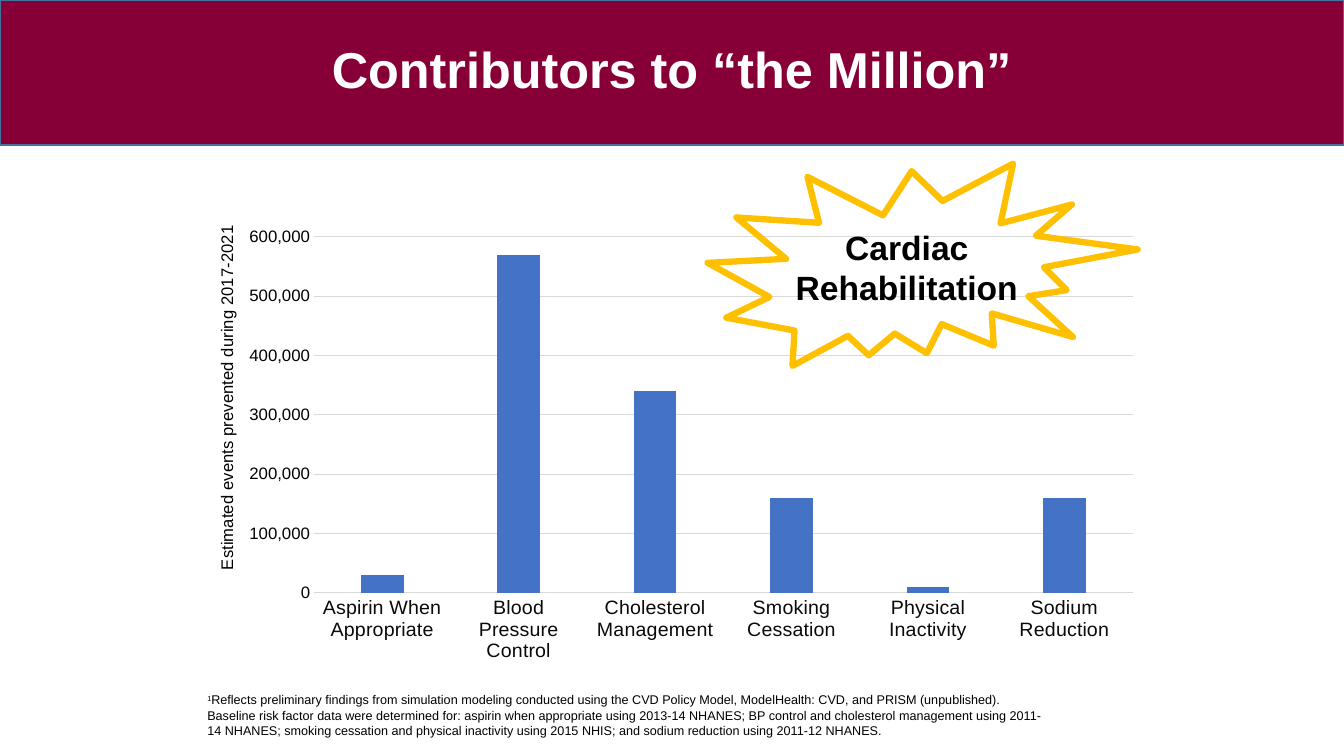
from lxml import etree
from pptx import Presentation
from pptx.chart.data import CategoryChartData
from pptx.dml.color import RGBColor
from pptx.enum.chart import XL_CHART_TYPE as ChartType, XL_TICK_MARK as Tick
from pptx.enum.shapes import MSO_SHAPE as Shape
from pptx.enum.text import MSO_ANCHOR as Anchor, PP_ALIGN as Align
from pptx.oxml.ns import qn
from pptx.util import Pt

MAROON = RGBColor(0x86, 0x00, 0x37)
EDGE_BLUE = RGBColor(0x43, 0x73, 0x9E)
BAR_BLUE = RGBColor(0x44, 0x72, 0xC4)
GOLD = RGBColor(0xFF, 0xC0, 0x00)
GRID_GREY = RGBColor(0xD9, 0xD9, 0xD9)
INK = RGBColor(0x0A, 0x0A, 0x0A)
BLACK = RGBColor(0, 0, 0)
WHITE = RGBColor(0xFF, 0xFF, 0xFF)

EVENTS_PREVENTED = {
    "Aspirin When Appropriate": 30000,
    "Blood Pressure Control": 570000,
    "Cholesterol Management": 340000,
    "Smoking Cessation": 160000,
    "Physical Inactivity": 10000,
    "Sodium Reduction": 160000,
}
FOOTNOTE = (
    "Reflects preliminary findings from simulation modeling conducted using the CVD "
    "Policy Model, ModelHealth: CVD, and PRISM (unpublished). Baseline risk factor data "
    "were determined for: aspirin when appropriate using 2013-14 NHANES; BP control and "
    "cholesterol management using 2011-14 NHANES; smoking cessation and physical "
    "inactivity using 2015 NHIS; and sodium reduction using 2011-12 NHANES."
)


def style_font(font, size, color, bold=False, name="Arial"):
    font.name, font.size, font.bold = name, Pt(size), bold
    font.color.rgb = color


def add_run(paragraph, text, size, color, bold=False):
    run = paragraph.add_run()
    run.text = text
    style_font(run.font, size, color, bold)
    return run


def add_text_area(slide, box, align=Align.LEFT, anchor=Anchor.TOP):
    frame = slide.shapes.add_textbox(*map(Pt, box)).text_frame
    frame.word_wrap = True
    frame.vertical_anchor = anchor
    paragraph = frame.paragraphs[0]
    paragraph.alignment = align
    return paragraph


def set_layout(parent, index, **settings):
    """Give a chart part a fixed place, in fractions of the chart."""
    for old in parent.findall(qn("c:layout")):
        parent.remove(old)
    layout = etree.Element(qn("c:layout"))
    manual = etree.SubElement(layout, qn("c:manualLayout"))
    for tag, value in settings.items():
        etree.SubElement(manual, qn(f"c:{tag}")).set("val", str(value))
    parent.insert(index, layout)


def add_header(slide, box):
    left, top, width, height = box
    band = slide.shapes.add_shape(Shape.RECTANGLE, *map(Pt, box))
    band.shadow.inherit = False
    band.fill.solid()
    band.fill.fore_color.rgb = MAROON
    band.line.color.rgb = EDGE_BLUE
    band.line.width = Pt(1)

    margin = 66
    title = add_text_area(slide, (left + margin, top, width - 2 * margin, height),
                          Align.CENTER, Anchor.MIDDLE)
    title.line_spacing = 0.9
    add_run(title, "Contributors to “the Million”", 36, WHITE, bold=True)


def add_events_chart(slide, box):
    data = CategoryChartData(number_format="#,##0")
    data.categories = list(EVENTS_PREVENTED)
    data.add_series("Series 1", list(EVENTS_PREVENTED.values()))
    chart = slide.shapes.add_chart(ChartType.COLUMN_CLUSTERED, *map(Pt, box), data).chart
    chart.has_legend = False
    chart.has_title = False
    style_font(chart.font, 12, INK, name="Calibri")

    # Bars
    plot = chart.plots[0]
    plot.gap_width, plot.overlap = 219, -27
    plot.vary_by_categories = False
    bars = plot.series[0].format.fill
    bars.solid()
    bars.fore_color.rgb = BAR_BLUE

    # Axes
    causes, events = chart.category_axis, chart.value_axis
    for axis, size, color in ((causes, 14, INK), (events, 12, BLACK)):
        axis.major_tick_mark = axis.minor_tick_mark = Tick.NONE
        style_font(axis.tick_labels.font, size, color)
    events.minimum_scale, events.maximum_scale, events.major_unit = 0, 600000, 100000
    events.tick_labels.number_format = "#,##0"
    events.tick_labels.number_format_is_linked = False
    events.format.line.fill.background()
    events.has_major_gridlines = True
    for line in (causes.format.line, events.major_gridlines.format.line):
        line.color.rgb = GRID_GREY
        line.width = Pt(0.75)

    # Axis title and fixed places
    axis_title = events.axis_title
    add_run(axis_title.text_frame.paragraphs[0],
            "Estimated events prevented during 2017-2021", 12, BLACK)
    title_xml = axis_title.format.line and events.axis_title._element
    set_layout(title_xml, 1, xMode="edge", yMode="edge", x=0.017, y=0.045)
    set_layout(title_xml.getparent().getparent(), 0, layoutTarget="inner", xMode="edge",
               yMode="edge", x=0.123, y=0.067, w=0.863, h=0.792)


def add_footnote(slide, box):
    note = add_text_area(slide, box)
    marker = add_run(note, "1", 9, BLACK)
    marker.font._element.set("baseline", "30000")
    add_run(note, FOOTNOTE, 9, BLACK)


def add_callout(slide, box):
    left, top, width, height = box
    label = add_text_area(slide, (left + 32.5, top + 49, 218, 65.5), Align.CENTER)
    add_run(label, "Cardiac Rehabilitation", 24, BLACK, bold=True)

    burst = slide.shapes.add_shape(Shape.EXPLOSION2, *map(Pt, box))
    burst.rotation = 7
    burst.shadow.inherit = False
    burst.fill.background()
    burst.line.color.rgb = GOLD
    burst.line.width = Pt(4.5)


def main():
    deck = Presentation()
    deck.slide_width, deck.slide_height = Pt(960), Pt(540)
    slide = deck.slides.add_slide(deck.slide_layouts[6])
    add_header(slide, (0, 0, 960, 103.7))
    add_events_chart(slide, (141, 147.6, 677.5, 325.4))
    add_footnote(slide, (141, 491, 615.6, 43.2))
    add_callout(slide, (506.2, 109.4, 303.8, 162.7))
    deck.save("out.pptx")


if __name__ == "__main__":
    main()
